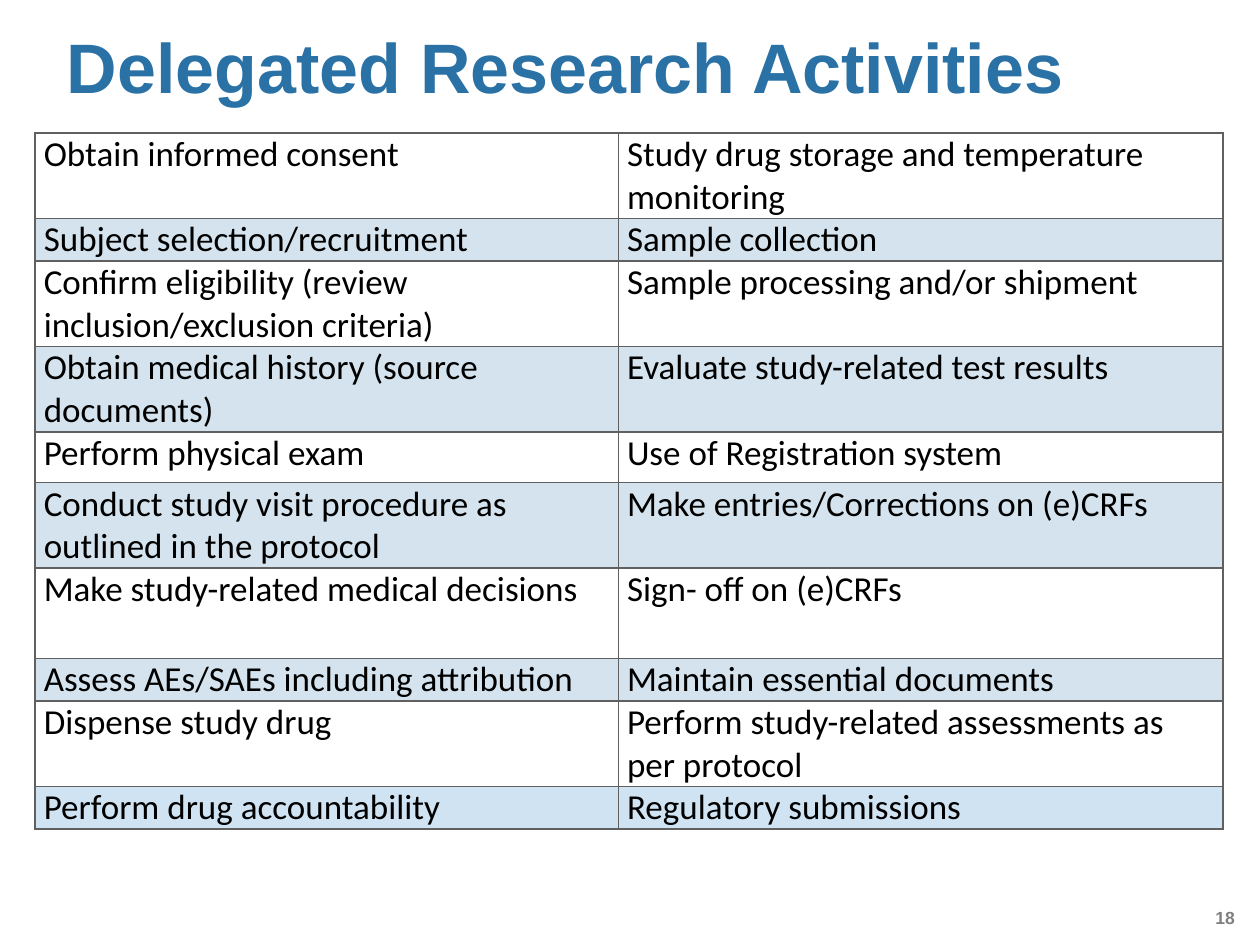
from dataclasses import dataclass

from lxml.etree import SubElement
from pptx import Presentation
from pptx.dml.color import RGBColor as Color
from pptx.enum.text import MSO_ANCHOR as Anchor, PP_ALIGN as Align
from pptx.oxml.ns import qn
from pptx.util import Pt


@dataclass(frozen=True)
class Theme:
    title: str = "2A71A5"
    text: str = "000000"
    number: str = "7F7F7F"
    band: str = "D4E3ED"
    last_band: str = "CFE3F3"
    border: str = "606060"
    heading_font: str = "Arial"
    body_font: str = "Calibri"
    title_size: float = 40
    body_size: float = 20
    number_size: float = 10


@dataclass(frozen=True)
class Label:
    text: str
    left: float
    top: float
    width: float
    height: float
    size: float
    color: str
    align: Align
    anchor: Anchor
    spacing: float


@dataclass(frozen=True)
class Activity:
    left: str
    right: str
    height: float


THEME = Theme()
ONE_LINE, TWO_LINES = 24.4, 48.8

LABELS = [
    Label("Delegated Research Activities", 38.2, 28.8, 643, 33.1, THEME.title_size,
          THEME.title, Align.LEFT, Anchor.BOTTOM, 0.9),
    Label("18", 681.1, 518.4, 24.5, 14.4, THEME.number_size,
          THEME.number, Align.RIGHT, Anchor.TOP, 1.01),
]

ACTIVITIES = [
    Activity("Obtain informed consent",
             "Study drug storage and temperature monitoring", TWO_LINES),
    Activity("Subject selection/recruitment", "Sample collection", ONE_LINE),
    Activity("Confirm eligibility (review inclusion/exclusion criteria)",
             "Sample processing and/or shipment", TWO_LINES),
    Activity("Obtain medical history (source documents)",
             "Evaluate study-related test results", TWO_LINES),
    Activity("Perform physical exam", "Use of Registration system", 29),
    Activity("Conduct study visit procedure as outlined in the protocol",
             "Make entries/Corrections on (e)CRFs", TWO_LINES),
    Activity("Make study-related medical decisions", "Sign- off on (e)CRFs", 51.6),
    Activity("Assess AEs/SAEs including attribution",
             "Maintain essential documents", ONE_LINE),
    Activity("Dispense study drug",
             "Perform study-related assessments as per protocol", TWO_LINES),
    Activity("Perform drug accountability", "Regulatory submissions", ONE_LINE),
]


def style_text(para, font: str, size: float, color: str, bold: bool) -> None:
    for span in para.runs:
        span.font.name = font
        span.font.size = Pt(size)
        span.font.bold = bold
        span.font.color.rgb = Color.from_string(color)


def add_label(page, label: Label) -> None:
    box = page.shapes.add_textbox(Pt(label.left), Pt(label.top),
                                  Pt(label.width), Pt(label.height))
    frame = box.text_frame
    frame.word_wrap = True
    frame.vertical_anchor = label.anchor
    frame.margin_left = frame.margin_right = frame.margin_top = frame.margin_bottom = 0
    frame.text = label.text
    para = frame.paragraphs[0]
    para.alignment = label.align
    para.line_spacing = label.spacing
    style_text(para, THEME.heading_font, label.size, label.color, True)


def add_borders(cell) -> None:
    # Border lines must come before the fill in the cell properties
    properties = cell._tc.get_or_add_tcPr()
    for side in ("a:lnL", "a:lnR", "a:lnT", "a:lnB"):
        line = SubElement(properties, qn(side), w=str(Pt(1)))
        fill = SubElement(line, qn("a:solidFill"))
        SubElement(fill, qn("a:srgbClr"), val=THEME.border)


def fill_cell(cell, text: str, band: str | None) -> None:
    cell.margin_left = cell.margin_right = Pt(5)
    cell.margin_top = cell.margin_bottom = 0
    cell.text_frame.text = text
    style_text(cell.text_frame.paragraphs[0], THEME.body_font, THEME.body_size,
               THEME.text, False)
    add_borders(cell)
    if band:
        cell.fill.solid()
        cell.fill.fore_color.rgb = Color.from_string(band)
    else:
        cell.fill.background()


def add_activity_table(page, activities: list[Activity]) -> None:
    widths = (333.3, 345.7)
    height = sum(activity.height for activity in activities)
    table = page.shapes.add_table(len(activities), len(widths), Pt(20), Pt(76.1),
                                  Pt(sum(widths)), Pt(height)).table
    table.first_row = table.horz_banding = False
    for column, width in zip(table.columns, widths):
        column.width = Pt(width)
    last = len(activities) - 1
    for index, activity in enumerate(activities):
        table.rows[index].height = Pt(activity.height)
        # Every second row is tinted, the last one in a lighter blue
        band = None
        if index % 2:
            band = THEME.last_band if index == last else THEME.band
        for column, text in enumerate((activity.left, activity.right)):
            fill_cell(table.cell(index, column), text, band)


def main() -> None:
    deck = Presentation()
    deck.slide_width, deck.slide_height = Pt(720), Pt(540)
    page = deck.slides.add_slide(deck.slide_layouts[6])

    # Title and page number
    for label in LABELS:
        add_label(page, label)

    # Activities in two columns
    add_activity_table(page, ACTIVITIES)

    deck.save("out.pptx")


if __name__ == "__main__":
    main()
